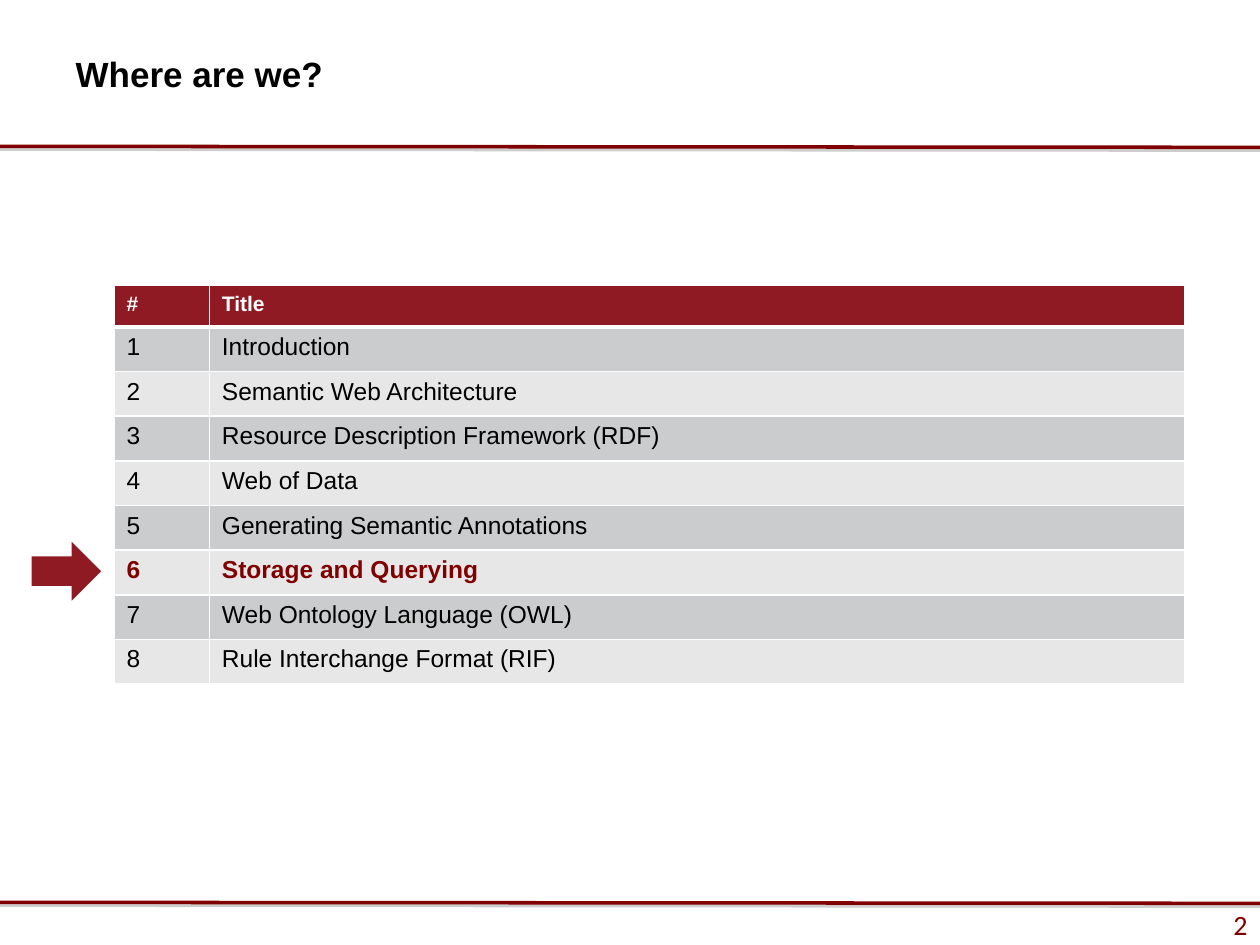
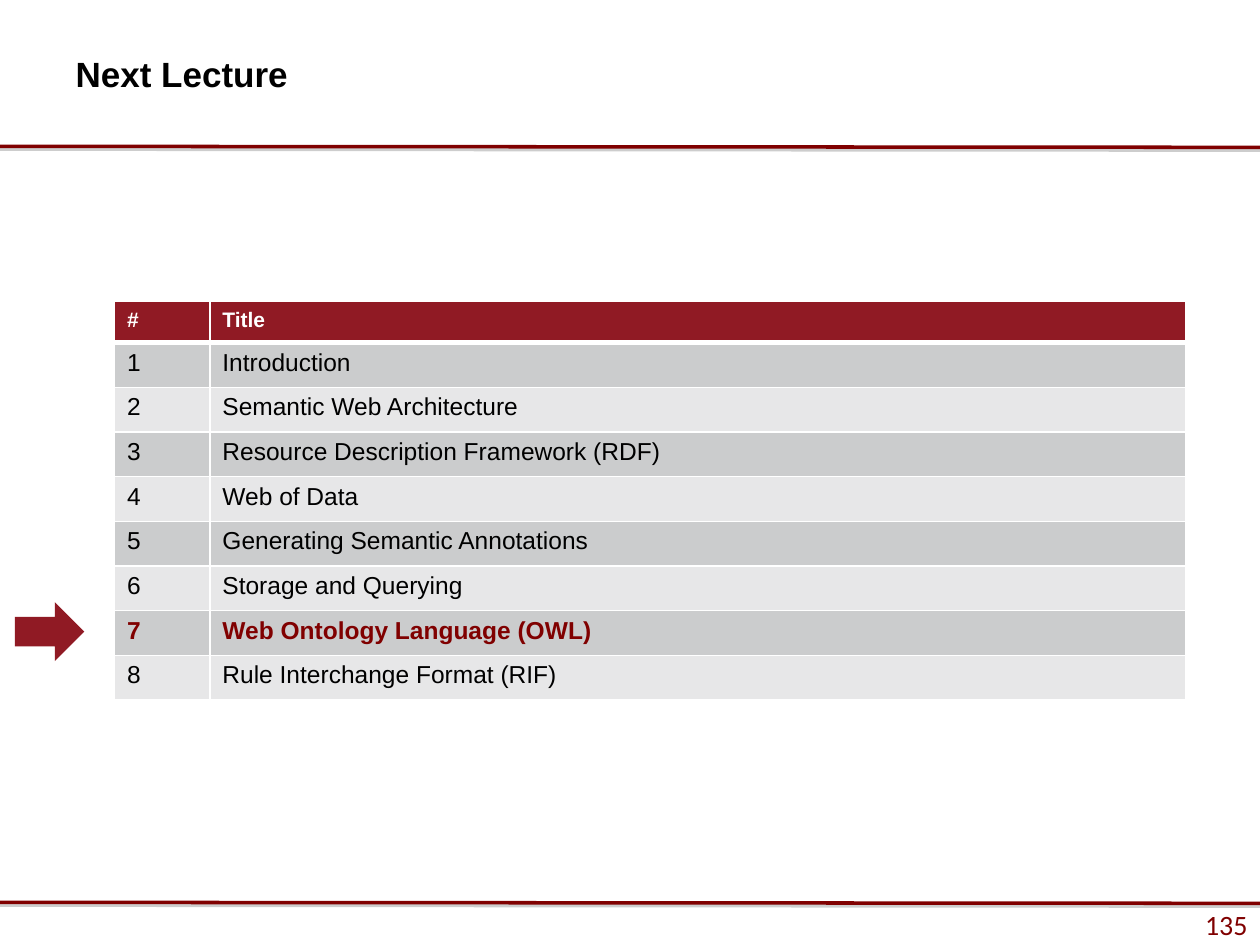
from lxml import etree
from pptx import Presentation
from pptx.dml.color import RGBColor
from pptx.enum.shapes import MSO_CONNECTOR, MSO_SHAPE
from pptx.enum.text import MSO_ANCHOR, PP_ALIGN
from pptx.oxml import parse_xml
from pptx.oxml.ns import nsdecls, qn
from pptx.util import Cm, Pt

STRAIGHT = MSO_CONNECTOR.STRAIGHT
RECTANGLE = MSO_SHAPE.RECTANGLE
RIGHT_ARROW = MSO_SHAPE.RIGHT_ARROW
MIDDLE = MSO_ANCHOR.MIDDLE
LEFT, RIGHT = PP_ALIGN.LEFT, PP_ALIGN.RIGHT

BLACK = RGBColor(0x00, 0x00, 0x00)
WHITE = RGBColor(0xFF, 0xFF, 0xFF)
MAROON = RGBColor(0x80, 0x00, 0x00)
CRIMSON = RGBColor(0x90, 0x1A, 0x24)
DARK_BAND = RGBColor(0xCB, 0xCC, 0xCD)
LIGHT_BAND = RGBColor(0xE7, 0xE7, 0xE8)

PAGE_WIDTH, PAGE_HEIGHT = Cm(25.4), Cm(19.05)
RULE_TOPS = (2.95, 18.19)
HEADER_HEIGHT, ROW_HEIGHT = Cm(0.83), Cm(0.9)
COLUMN_WIDTHS = (Cm(1.92), Cm(19.67))

LECTURES = (
    "Introduction",
    "Semantic Web Architecture",
    "Resource Description Framework (RDF)",
    "Web of Data",
    "Generating Semantic Annotations",
    "Storage and Querying",
    "Web Ontology Language (OWL)",
    "Rule Interchange Format (RIF)",
)

# Title, page number, current lecture, table corner, arrow corner (cm)
PAGES = (
    ("Where are we?", "2", 6, (2.3, 5.76), (0.64, 10.92)),
    ("Next Lecture", "135", 7, (2.31, 6.08), (0.3, 12.14)),
)

RULE_SHADOW = (
    f'<a:effectLst {nsdecls("a")}><a:outerShdw dist="20320" dir="5400000" '
    'rotWithShape="0"><a:srgbClr val="808080"><a:alpha val="38000"/>'
    '</a:srgbClr></a:outerShdw></a:effectLst>'
)


def style_text(paragraph, size, color, bold=False, name="Arial"):
    for span in paragraph.runs:
        span.font.name = name
        span.font.size = Pt(size)
        span.font.bold = bold
        span.font.color.rgb = color


def add_borders(cell, top, bottom):
    properties = cell._tc.get_or_add_tcPr()
    for side, points in (("L", 1), ("R", 1), ("T", top), ("B", bottom)):
        border = etree.SubElement(properties, qn(f"a:ln{side}"), w=str(Pt(points)))
        fill = etree.SubElement(border, qn("a:solidFill"))
        etree.SubElement(fill, qn("a:srgbClr"), val=str(WHITE))


deck = Presentation()
deck.slide_width, deck.slide_height = PAGE_WIDTH, PAGE_HEIGHT
title_only = deck.slide_layouts[5]

for title_text, number, current, table_corner, arrow_corner in PAGES:
    page = deck.slides.add_slide(title_only)

    # Title
    title = page.shapes.title
    title.left, title.top = Cm(1.27), Cm(0.84)
    title.width, title.height = Cm(16.08), Cm(1.27)
    title.text_frame.text = title_text
    title.text_frame.vertical_anchor = MIDDLE
    title.text_frame.paragraphs[0].alignment = LEFT
    style_text(title.text_frame.paragraphs[0], 20, BLACK, bold=True)

    # Footer with page number
    footer = page.shapes.add_shape(RECTANGLE, 0, Cm(18.31), PAGE_WIDTH, Cm(0.64))
    footer.shadow.inherit = False
    footer.fill.solid()
    footer.fill.fore_color.rgb = WHITE
    footer.line.fill.background()
    footer.text_frame.text = number
    footer.text_frame.word_wrap = False
    footer.text_frame.vertical_anchor = MIDDLE
    footer.text_frame.paragraphs[0].alignment = RIGHT
    style_text(footer.text_frame.paragraphs[0], 16, MAROON, name="Calibri")

    # Rules below the title and above the footer
    for top in RULE_TOPS:
        rule = page.shapes.add_connector(
            STRAIGHT, 0, Cm(top), PAGE_WIDTH, Cm(top + 0.02))
        rule.line.color.rgb = MAROON
        rule.line.width = Pt(2)
        rule._element.spPr.append(parse_xml(RULE_SHADOW))

    # Lecture table
    rows = [("#", "Title")]
    rows += [(str(index), name) for index, name in enumerate(LECTURES, 1)]
    left, top = table_corner
    table = page.shapes.add_table(
        len(rows), 2, Cm(left), Cm(top), sum(COLUMN_WIDTHS),
        HEADER_HEIGHT + ROW_HEIGHT * len(LECTURES)).table
    for column, width in zip(table.columns, COLUMN_WIDTHS):
        column.width = width
    for index, texts in enumerate(rows):
        is_header = index == 0
        is_current = index == current
        table.rows[index].height = HEADER_HEIGHT if is_header else ROW_HEIGHT
        if is_header:
            band, size, color = CRIMSON, 12, WHITE
        else:
            band = DARK_BAND if index % 2 else LIGHT_BAND
            size, color = 14, MAROON if is_current else BLACK
        for cell, text in zip(table.rows[index].cells, texts):
            add_borders(cell, 3 if index == 1 else 1, 3 if is_header else 1)
            cell.fill.solid()
            cell.fill.fore_color.rgb = band
            cell.text_frame.text = text
            style_text(cell.text_frame.paragraphs[0], size, color,
                       bold=is_header or is_current)

    # Arrow pointing at the current lecture
    left, top = arrow_corner
    arrow = page.shapes.add_shape(RIGHT_ARROW, Cm(left), Cm(top), Cm(1.4), Cm(1.19))
    arrow.shadow.inherit = False
    arrow.fill.solid()
    arrow.fill.fore_color.rgb = CRIMSON
    arrow.line.fill.background()

deck.save("out.pptx")
